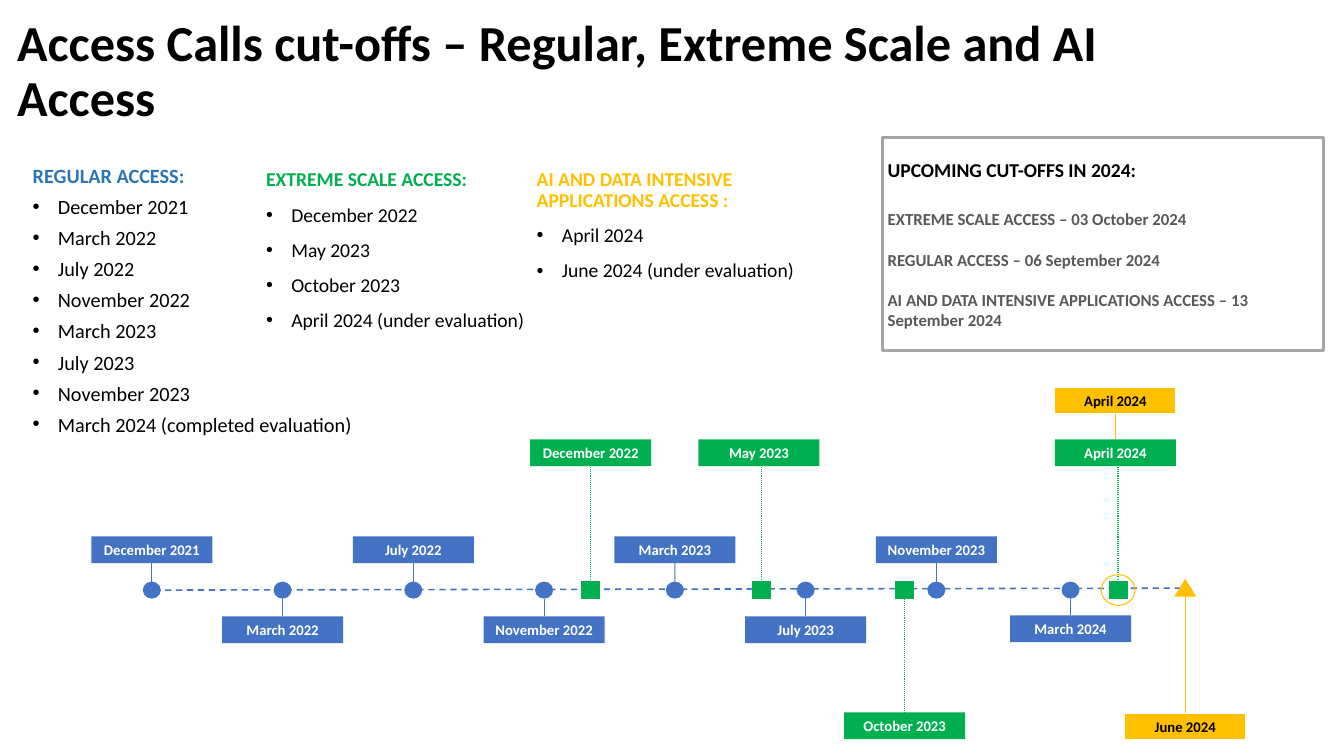
"""Build the access calls cut-off timeline slide."""
from dataclasses import dataclass
from typing import Optional

from lxml import etree
from pptx import Presentation
from pptx.dml.color import RGBColor
from pptx.enum.dml import MSO_LINE
from pptx.enum.shapes import MSO_CONNECTOR, MSO_SHAPE
from pptx.enum.text import MSO_ANCHOR, PP_ALIGN
from pptx.oxml.ns import qn
from pptx.util import Cm, Pt

STRAIGHT = MSO_CONNECTOR.STRAIGHT
RECT, OVAL = MSO_SHAPE.RECTANGLE, MSO_SHAPE.OVAL
PROCESS, TRIANGLE = MSO_SHAPE.FLOWCHART_PROCESS, MSO_SHAPE.ISOSCELES_TRIANGLE
DASH, DOT = MSO_LINE.DASH, MSO_LINE.ROUND_DOT
MIDDLE, TOP_ANCHOR = MSO_ANCHOR.MIDDLE, MSO_ANCHOR.TOP
CENTER, LEFT = PP_ALIGN.CENTER, PP_ALIGN.LEFT
TOP, BOTTOM = 0, 2

AXIS_Y = 29.74
LABEL_W, LABEL_H = 6.1, 1.35
MARKER_W, MARKER_H = 0.91, 0.86
ABOVE, BELOW = 27.03, 31.06
HIGH, HIGHEST, LOW = 22.14, 19.51, 35.9
FIRST_X, STEP_X = 7.65, 6.59


@dataclass(frozen=True)
class Theme:
    font: str = "Calibri"
    black: str = "000000"
    white: str = "FFFFFF"
    heading_blue: str = "2E75B6"
    blue: str = "4472C4"
    green: str = "00B050"
    yellow: str = "FFC000"
    grey: str = "A5A5A5"
    dark_grey: str = "595959"
    title: float = 72
    list_text: float = 28
    panel: float = 24
    label: float = 21


THEME = Theme()


@dataclass(frozen=True)
class Track:
    color: str
    text_color: str
    marker: MSO_SHAPE
    stem_offset: float
    dash: Optional[MSO_LINE] = None
    marker_line: Optional[float] = None


@dataclass(frozen=True)
class Event:
    text: str
    x: float
    top: float
    label_x: Optional[float] = None


@dataclass(frozen=True)
class AccessList:
    box: tuple[float, float, float, float]
    heading: str
    color: str
    items: tuple[str, ...]
    spacing: float = 0.9
    inset: float = 0.51
    size: float = THEME.list_text


REGULAR = Track(THEME.blue, THEME.white, OVAL, MARKER_H / 2)
EXTREME = Track(THEME.green, THEME.white, PROCESS, 0, DOT, 1)

REGULAR_DATES = ("December 2021", "March 2022", "July 2022", "November 2022",
                 "March 2023", "July 2023", "November 2023")
REGULAR_EVENTS = [Event(text, FIRST_X + i * STEP_X, BELOW if i % 2 else ABOVE)
                  for i, text in enumerate(REGULAR_DATES)]
REGULAR_EVENTS.append(Event("March 2024", 53.95, 31.01))
EXTREME_EVENTS = [
    Event("December 2022", 29.77, HIGH),
    Event("May 2023", 38.38, HIGH, 38.25),
    Event("October 2023", 45.59, LOW),
]
SHARED_X = 56.21
EXTREME_EVENTS.append(Event("April 2024", 56.34, HIGH, SHARED_X))

LISTS = (
    AccessList((1.4, 8.46, 19.2, 14.05), "REGULAR ACCESS:", THEME.heading_blue,
               REGULAR_DATES + ("March 2024 (completed evaluation)",), 0.7, 0.25, 28.9),
    AccessList((12.9, 8.31, 21, 9.09), "EXTREME SCALE ACCESS:", THEME.green,
               ("December 2022", "May 2023", "October 2023", "April 2024 (under evaluation)")),
    AccessList((26.54, 8.28, 16.36, 9.09), "AI AND DATA INTENSIVE APPLICATIONS ACCESS :",
               THEME.yellow, ("April 2024", "June 2024 (under evaluation)")),
)
# fmt: off
CUT_OFFS = (
    ("UPCOMING CUT-OFFS IN 2024:", THEME.list_text, THEME.black, 0),
    ("EXTREME SCALE ACCESS – 03 October 2024", THEME.panel, THEME.dark_grey, 39),
    ("REGULAR ACCESS – 06 September 2024", THEME.panel, THEME.dark_grey, 29),
    ("AI AND DATA INTENSIVE APPLICATIONS ACCESS – 13 September 2024",
     THEME.panel, THEME.dark_grey, 29),
)


def style(p, size: float, color: str, bold: bool = True, align=LEFT) -> None:
    """Format a paragraph and its runs."""
    p.alignment = align
    for r in p.runs:
        r.font.name, r.font.size, r.font.bold = THEME.font, Pt(size), bold
        r.font.color.rgb = RGBColor.from_string(color)


def add_shape(s, kind, box, fill: Optional[str], line: Optional[str] = None, width: float = 0):
    """Add a flat preset shape with box lengths in centimetres."""
    sp = s.shapes.add_shape(kind, *map(Cm, box))
    sp.shadow.inherit = False
    if fill:
        sp.fill.solid()
        sp.fill.fore_color.rgb = RGBColor.from_string(fill)
    else:
        sp.fill.background()
    if line:
        sp.line.color.rgb = RGBColor.from_string(line)
        sp.line.width = Pt(width)
    else:
        sp.line.fill.background()
    return sp


def add_line(s, start, end, color: str, width: float, dash=None):
    """Add a straight connector without a shadow."""
    line = s.shapes.add_connector(STRAIGHT, *map(Cm, (*start, *end)))
    line.line.color.rgb = RGBColor.from_string(color)
    line.line.width = Pt(width)
    if dash:
        line.line.dash_style = dash
    etree.SubElement(line._element.spPr, qn("a:effectLst"))
    return line


def add_label(s, text: str, x: float, top: float, fill: str, color: str,
              line: Optional[str] = None):
    """Add a date label centred on x."""
    sp = add_shape(s, RECT, (x - LABEL_W / 2, top, LABEL_W, LABEL_H), fill, line, 1.5)
    tf = sp.text_frame
    tf.text, tf.vertical_anchor = text, MIDDLE
    style(tf.paragraphs[0], THEME.label, color, align=CENTER)
    return sp


def add_event(s, event: Event, track: Track) -> None:
    """Add a label, its stem and its marker on the axis."""
    label_x = event.label_x or event.x
    label = add_label(s, event.text, label_x, event.top, track.color, track.text_color)
    above = event.top < AXIS_Y
    start = AXIS_Y - track.stem_offset if above else AXIS_Y + track.stem_offset
    end = event.top + LABEL_H if above else event.top
    stem = add_line(s, (event.x, start), (event.x, end), track.color, 1.5, track.dash)
    if label_x == event.x:
        stem.end_connect(label, BOTTOM if above else TOP)
    box = (event.x - MARKER_W / 2, AXIS_Y - MARKER_H / 2, MARKER_W, MARKER_H)
    add_shape(s, track.marker, box, track.color,
              track.color if track.marker_line else None, track.marker_line or 0)


def add_list(s, access: AccessList) -> None:
    """Add a heading with bulleted dates below it."""
    tf = s.shapes.add_textbox(*map(Cm, access.box)).text_frame
    tf.word_wrap, tf.vertical_anchor = True, TOP_ANCHOR
    tf.margin_left = tf.margin_right = Cm(access.inset)
    tf.margin_top = tf.margin_bottom = Cm(access.inset / 2)
    tf.text = "\n".join((access.heading, *access.items))
    for i, p in enumerate(tf.paragraphs):
        p.line_spacing = access.spacing
        if i:
            p.space_before = Pt(20)
            pPr = p._p.get_or_add_pPr()
            pPr.set("marL", str(Cm(1.27)))
            pPr.set("indent", str(-Cm(1.27)))
            etree.SubElement(pPr, qn("a:buFont"), typeface="Arial")
            etree.SubElement(pPr, qn("a:buChar"), char="•")
        style(p, access.size, THEME.black if i else access.color, bold=not i)


def add_panel(s) -> None:
    """Add the framed panel of upcoming cut-offs."""
    sp = add_shape(s, RECT, (44.48, 6.93, 22.2, 10.74), THEME.white, THEME.grey, 4.5)
    tf = sp.text_frame
    tf.text, tf.vertical_anchor = "\n".join(row[0] for row in CUT_OFFS), MIDDLE
    for p, (_, size, color, gap) in zip(tf.paragraphs, CUT_OFFS):
        p.space_before = Pt(gap)
        style(p, size, color)


def add_ai_track(s) -> None:
    """Add the AI access labels, ring and triangle."""
    april = add_label(s, "April 2024", SHARED_X, HIGHEST, THEME.yellow, THEME.black, THEME.white)
    link = add_line(s, (SHARED_X, HIGHEST + LABEL_H), (SHARED_X, HIGH), THEME.yellow, 0.5)
    link.begin_connect(april, BOTTOM)
    add_shape(s, OVAL, (55.5, 28.96, 1.7, 1.55), None, THEME.yellow, 1.5)
    add_shape(s, TRIANGLE, (59.21, 29.21, 1.04, 0.84), THEME.yellow, THEME.yellow, 1)
    june_x = 59.73
    june = add_label(s, "June 2024", june_x, LOW + 0.04, THEME.yellow, THEME.black, THEME.white)
    stem = add_line(s, (june_x, 30.05), (june_x, LOW + 0.04), THEME.yellow, 0.5)
    stem.end_connect(june, TOP)


def main() -> None:
    """Build and save the slide."""
    prs = Presentation()
    prs.slide_width, prs.slide_height = Cm(67.73), Cm(38.1)
    s = prs.slides.add_slide(prs.slide_layouts[5])
    title = s.shapes.title
    title.left, title.top, title.width, title.height = map(Cm, (0.61, -0.03, 58.42, 7.37))
    tf = title.text_frame
    tf.text = "Access Calls cut-offs – Regular, Extreme Scale and AI Access"
    tf.vertical_anchor, tf.word_wrap = MIDDLE, True
    tf.paragraphs[0].line_spacing = 0.9
    style(tf.paragraphs[0], THEME.title, THEME.black)
    for access in LISTS:
        add_list(s, access)
    add_panel(s)
    add_line(s, (7.21, 29.74), (60.02, 29.64), THEME.blue, 2.25, DASH)
    for track, events in ((REGULAR, REGULAR_EVENTS), (EXTREME, EXTREME_EVENTS)):
        for event in events:
            add_event(s, event, track)
    add_ai_track(s)
    prs.save("out.pptx")


if __name__ == "__main__":
    main()
